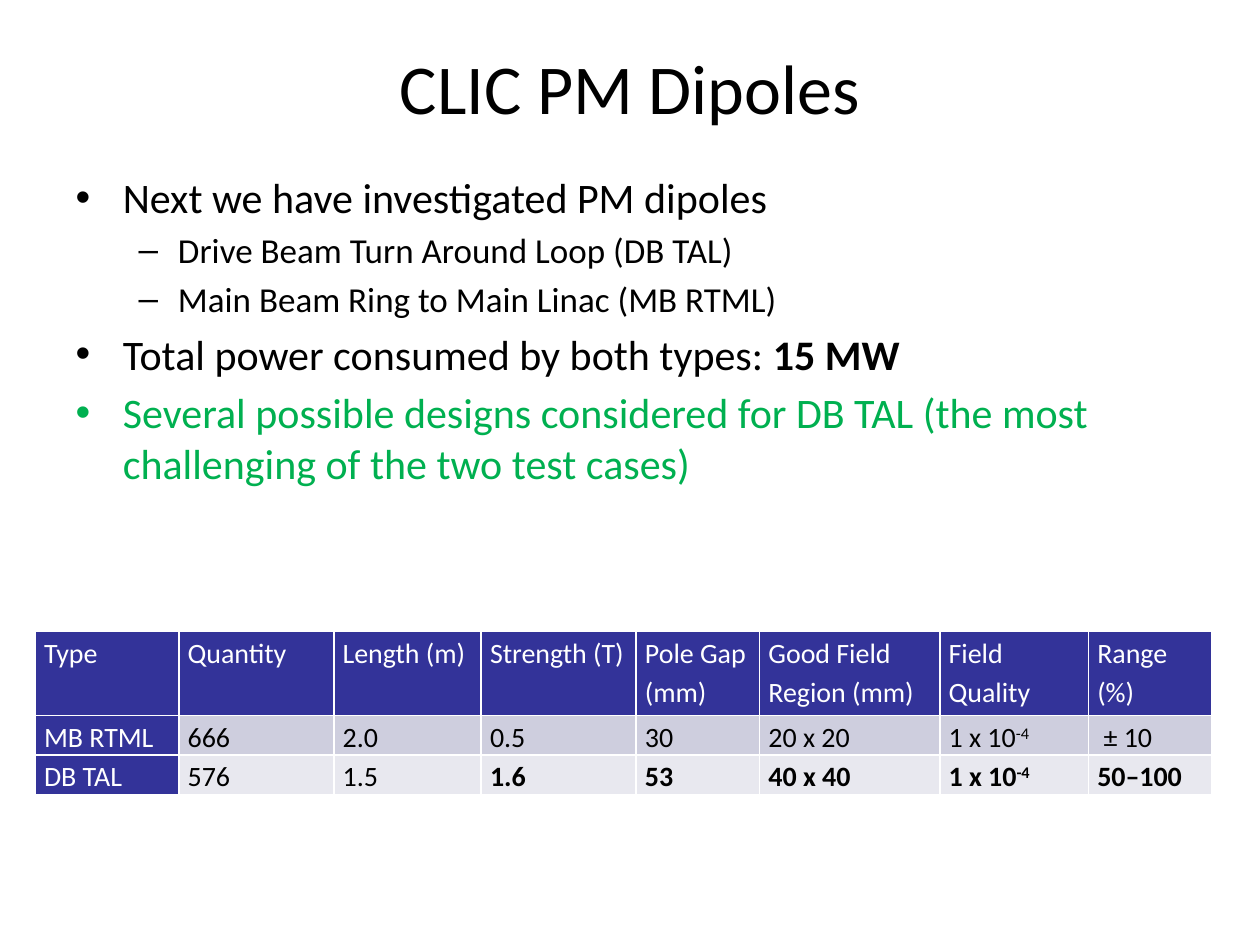
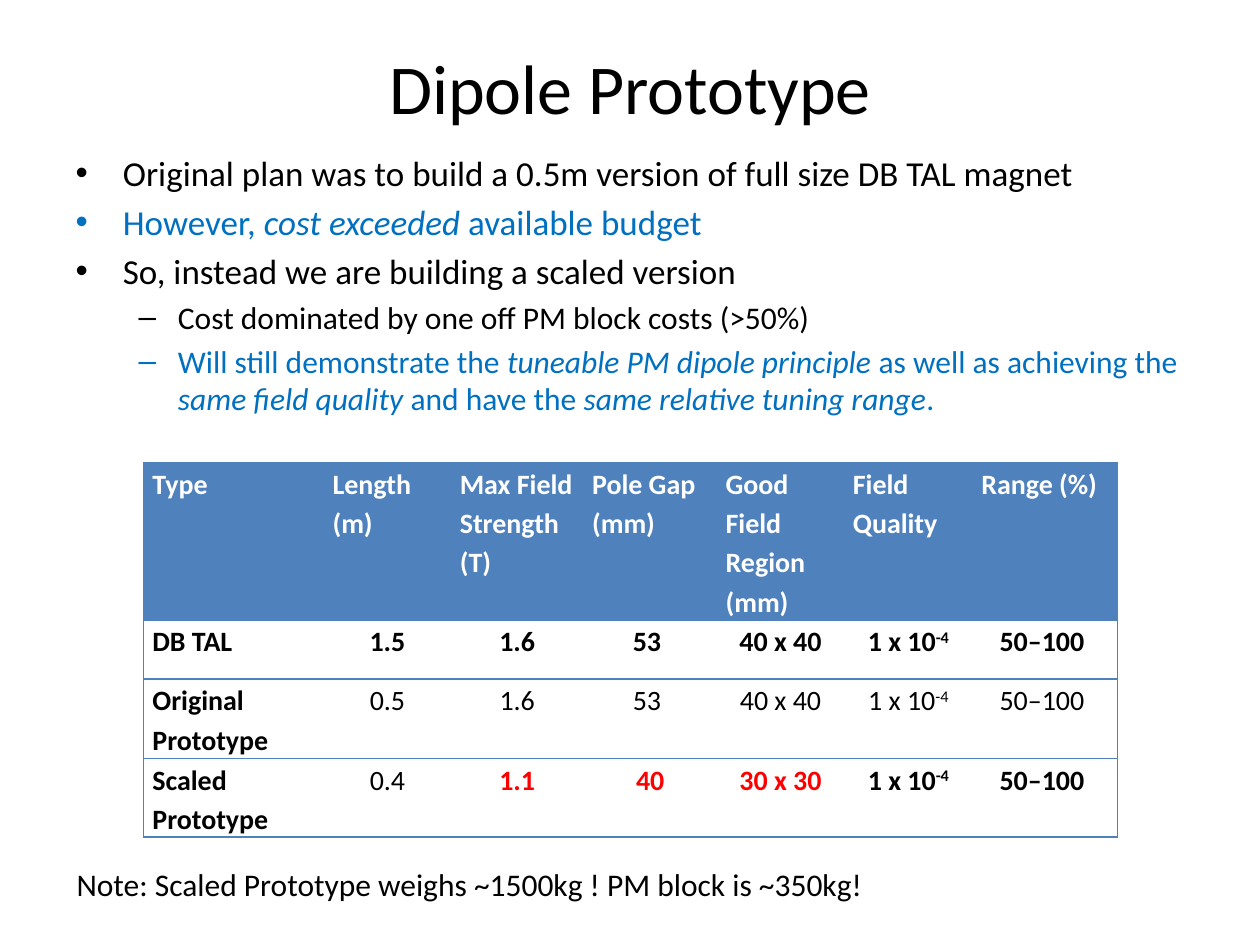
"""Build two slides about permanent magnet dipoles and their prototype."""
from lxml import etree
from pptx import Presentation
from pptx import util as u
from pptx.dml.color import RGBColor
from pptx.enum import text
from pptx.oxml import ns

COLORS = {
    "black": "000000", "white": "FFFFFF", "green": "00B050", "blue": "0070C0",
    "red": "FF0000", "indigo": "333399", "band": "CECEDE", "pale": "E8E8EF",
    "steel": "4F81BD",
}
FONT = "Calibri"
MARKS = {"*": "bold", "_": "italic", "^": "superscript"}


class Deck:
    """Hold the shared style and the current slide."""

    def __init__(self):
        self.presentation = Presentation()
        self.presentation.slide_width = u.Inches(10)
        self.presentation.slide_height = u.Inches(7.5)
        self.slide = None

    def place(self, shape, left, top, width, height):
        """Move and size a shape in inches."""
        shape.left, shape.top = u.Inches(left), u.Inches(top)
        shape.width, shape.height = u.Inches(width), u.Inches(height)

    def add_runs(self, paragraph, content, size, color="black", bold=False):
        """Fill a paragraph, styling the parts enclosed in a mark."""
        mark = next((mark for mark in MARKS if mark in content), None)
        for index, part in enumerate(content.split(mark) if mark else [content]):
            if not part:
                continue
            run = paragraph.add_run()
            run.text = part
            font = run.font
            font.name, font.size = FONT, u.Pt(size)
            font.color.rgb = RGBColor.from_string(COLORS[color])
            emphasis = MARKS[mark] if index % 2 else None
            font.bold = bold or emphasis == "bold"
            font.italic = emphasis == "italic"
            if emphasis == "superscript":
                run._r.get_or_add_rPr().set("baseline", "30000")

    def start(self, title):
        """Add a slide with its title."""
        self.slide = self.presentation.slides.add_slide(self.presentation.slide_layouts[1])
        shape = self.slide.shapes.title
        self.place(shape, 0.5, 0.3, 9, 0.77)
        shape.text_frame.auto_size = text.MSO_AUTO_SIZE.NONE
        paragraph = shape.text_frame.paragraphs[0]
        paragraph.alignment = text.PP_ALIGN.CENTER
        self.add_runs(paragraph, title, 40)

    def bullets(self, top, height, sizes, items):
        """Fill the body with (level, content, color) items."""
        shape = self.slide.placeholders[1]
        self.place(shape, 0.5, top, 9, height)
        frame = shape.text_frame
        frame.auto_size = text.MSO_AUTO_SIZE.NONE
        for index, (level, content, color) in enumerate(items):
            paragraph = frame.add_paragraph() if index else frame.paragraphs[0]
            paragraph.level = level
            self.add_runs(paragraph, content, sizes[level], color)

    def borders(self, cell, sides):
        """Draw the cell sides given as a color name or None."""
        properties = cell._tc.get_or_add_tcPr()
        for side, color in sides.items():
            line = etree.SubElement(properties, ns.qn(f"a:ln{side}"), w=str(u.Pt(1)))
            if color is None:
                etree.SubElement(line, ns.qn("a:noFill"))
            else:
                fill = etree.SubElement(line, ns.qn("a:solidFill"))
                etree.SubElement(fill, ns.qn("a:srgbClr"), val=COLORS[color])

    def table(self, left, top, widths, heights, rows, look, space_after=0):
        """Add a table whose cells are styled by look(row, column)."""
        frame = self.slide.shapes.add_table(
            len(rows), len(widths), u.Inches(left), u.Inches(top),
            u.Inches(sum(widths)), u.Inches(sum(heights)))
        table = frame.table
        table.horz_banding = table.first_row = False
        for column, width in zip(table.columns, widths):
            column.width = u.Inches(width)
        for row, height in zip(table.rows, heights):
            row.height = u.Inches(height)
        for row, values in enumerate(rows):
            for column, value in enumerate(values):
                cell = table.cell(row, column)
                style = look(row, column)
                cell.margin_left = cell.margin_right = u.Inches(0.07)
                cell.margin_top = cell.margin_bottom = 0
                self.borders(cell, style["sides"])
                if style["fill"]:
                    cell.fill.solid()
                    cell.fill.fore_color.rgb = RGBColor.from_string(COLORS[style["fill"]])
                else:
                    cell.fill.background()
                paragraph = cell.text_frame.paragraphs[0]
                paragraph.line_spacing = 1.15
                paragraph.space_after = u.Pt(space_after)
                paragraph.alignment = style["align"]
                self.add_runs(paragraph, value, 16, style["color"], style["bold"])

    def note(self, left, top, width, height, content):
        """Add a wrapped text box."""
        shape = self.slide.shapes.add_textbox(
            u.Inches(left), u.Inches(top), u.Inches(width), u.Inches(height))
        shape.text_frame.word_wrap = True
        self.add_runs(shape.text_frame.paragraphs[0], content, 18)


def dipole_look(row, column):
    """Style a cell of the dipole types table."""
    heading = row == 0 or column == 0
    return {
        "fill": "indigo" if heading else ("band", "pale")[row - 1],
        "color": "white" if heading else "black",
        "bold": row == 2 and column >= 3,
        "align": text.PP_ALIGN.LEFT,
        "sides": dict.fromkeys("LRTB", "white"),
    }


def prototype_look(row, column):
    """Style a cell of the prototype comparison table."""
    heading = row == 0 or column == 0
    changed = row == 3 and 2 <= column <= 4
    return {
        "fill": None if row else "steel",
        "color": "white" if row == 0 else "red" if changed else "black",
        "bold": heading or row == 1 or (row == 3 and column >= 2),
        "align": text.PP_ALIGN.LEFT if heading else text.PP_ALIGN.CENTER,
        "sides": {"L": None if column else "steel",
                  "R": "steel" if column == 6 else None,
                  "T": "steel", "B": "steel"},
    }


def main():
    """Build and save both slides."""
    deck = Deck()

    deck.start("CLIC PM Dipoles")
    deck.bullets(1.31, 2.91, (24, 20), [
        (0, "Next we have investigated PM dipoles", "black"),
        (1, "Drive Beam Turn Around Loop (DB TAL)", "black"),
        (1, "Main Beam Ring to Main Linac (MB RTML)", "black"),
        (0, "Total power consumed by both types: *15 MW*", "black"),
        (0, "Several possible designs considered for DB TAL "
            "(the most challenging of the two test cases)", "green"),
    ])
    deck.table(0.28, 5.01, (1.14, 1.23, 1.17, 1.23, 0.98, 1.43, 1.18, 0.98),
               (0.67, 0.31, 0.31), [
        ("Type", "Quantity", "Length (m)", "Strength (T)", "Pole Gap (mm)",
         "Good Field Region (mm)", "Field Quality", "Range (%)"),
        ("MB RTML", "666", "2.0", "0.5", "30", "20 x 20", "1 x 10^-4^", " ± 10"),
        ("DB TAL", "576", "1.5", "1.6", "53", "40 x 40", "1 x 10^-4^", "50–100"),
    ], dipole_look)

    deck.start("Dipole Prototype")
    deck.bullets(1.15, 5.55, (20, 18), [
        (0, "Original plan was to build a 0.5m version of full size DB TAL magnet", "black"),
        (0, "However, _cost exceeded _available budget", "blue"),
        (0, "So, instead we are building a scaled version", "black"),
        (1, "Cost dominated by one off PM block costs (>50%)", "black"),
        (1, "Will still demonstrate the _tuneable PM dipole principle _as well as "
            "achieving the _same field quality _and have the "
            "_same relative tuning range_.", "blue"),
    ])
    deck.table(1.14, 3.67, (1.43, 1.01, 1.05, 1.06, 1.01, 1.02, 1.15),
               (1.25, 0.47, 0.63, 0.62), [
        ("Type", "Length (m)", "Max Field Strength (T)", "Pole Gap (mm)",
         "Good Field Region (mm)", "Field Quality", "Range (%)"),
        ("DB TAL", "1.5", "1.6", "53 ", "40 x 40", "1 x 10^-4^", "50–100 "),
        ("Original Prototype", "0.5", "1.6", "53 ", "40 x 40", "1 x 10^-4^", "50–100 "),
        ("Scaled Prototype", "0.4", "1.1", "40", "30 x 30", "1 x 10^-4^", "50–100 "),
    ], prototype_look, space_after=10)
    deck.note(0.51, 6.82, 9.13, 0.4,
              "Note: Scaled Prototype weighs ~1500kg ! PM block is ~350kg!")

    deck.presentation.save("out.pptx")


if __name__ == "__main__":
    main()
